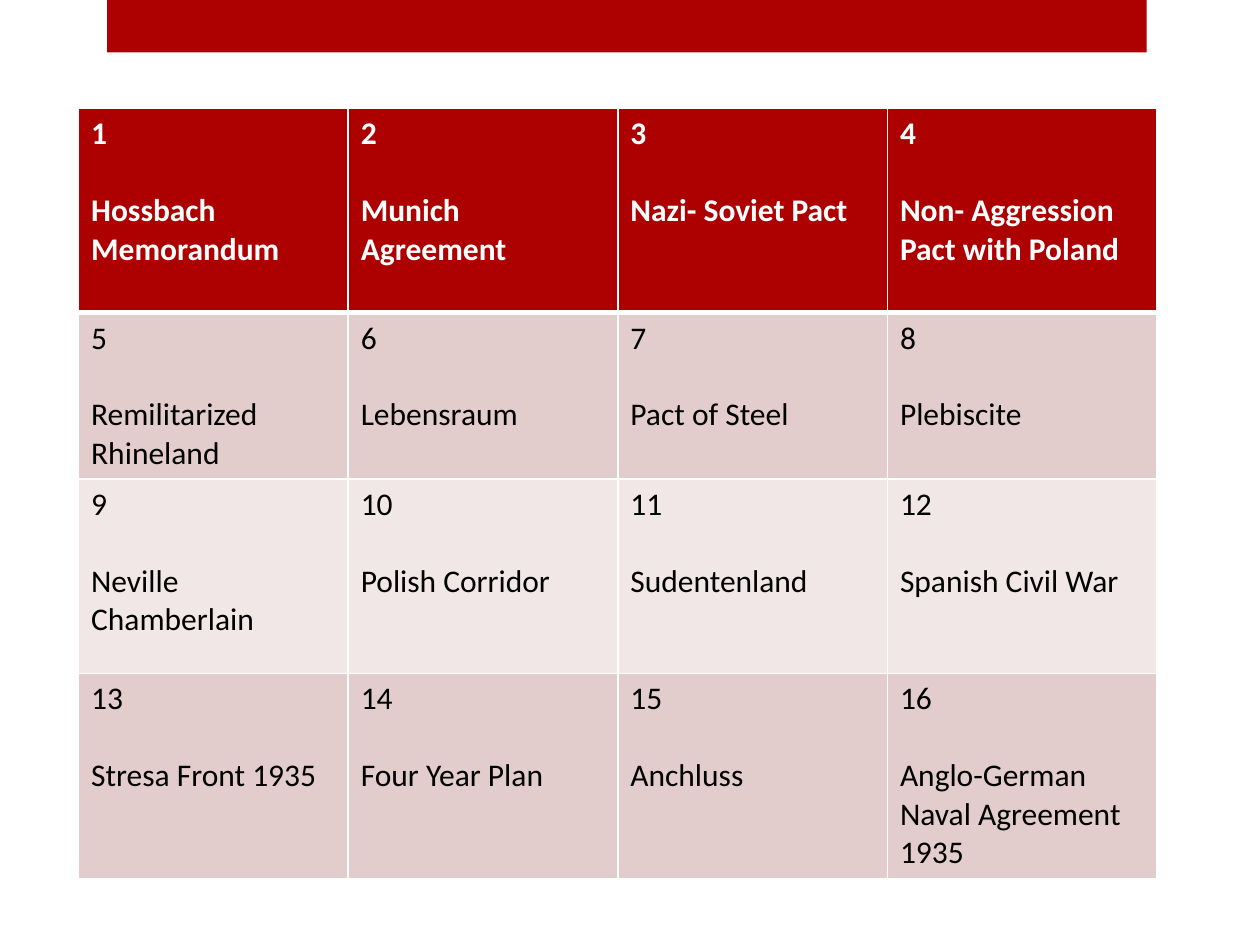
from dataclasses import dataclass

from lxml.etree import SubElement
from pptx import Presentation
from pptx.dml.color import RGBColor as Color
from pptx.enum.shapes import MSO_SHAPE as Shape
from pptx.oxml.ns import qn
from pptx.util import Pt

TERMS = [
    ["Hossbach Memorandum", "Munich Agreement", "Nazi- Soviet Pact", "Non- Aggression Pact with Poland"],
    ["Remilitarized Rhineland", "Lebensraum", "Pact of Steel", "Plebiscite"],
    ["Neville Chamberlain", "Polish Corridor", "Sudentenland", "Spanish Civil War"],
    ["Stresa Front 1935", "Four Year Plan", "Anchluss", "Anglo-German Naval Agreement 1935"],
]
ROW_HEIGHTS = [116.6, 95, 111, 117]
COLUMN_WIDTH = 154.08
TABLE_LEFT, TABLE_TOP = 44.9, 62.1
BANNER = (61.2, 0, 594, 30)


@dataclass(frozen=True)
class Theme:
    red: str = "AD0101"
    white: str = "FFFFFF"
    black: str = "000000"
    bands: tuple = ("F1E7E7", "E3CCCC")
    font: str = "Calibri"
    size: float = 18
    term_gap: float = 22
    border: float = 1
    header_border: float = 3


THEME = Theme()


def add_banner(slide):
    """Draw the red bar at the top of the slide."""
    banner = slide.shapes.add_shape(Shape.RECTANGLE, *map(Pt, BANNER))
    banner.shadow.inherit = False
    banner.fill.solid()
    banner.fill.fore_color.rgb = Color.from_string(THEME.red)
    banner.line.fill.background()


def set_borders(cell, bottom_width):
    """Give a cell white borders with the given bottom width."""
    properties = cell._tc.get_or_add_tcPr()
    widths = {"lnL": THEME.border, "lnR": THEME.border, "lnT": THEME.border, "lnB": bottom_width}
    for tag, width in widths.items():
        line = SubElement(properties, qn(f"a:{tag}"), w=str(Pt(width)))
        fill = SubElement(line, qn("a:solidFill"))
        SubElement(fill, qn("a:srgbClr"), val=THEME.white)


def fill_cell(cell, number, term, is_header, band):
    """Write a numbered term and style its cell."""
    set_borders(cell, THEME.header_border if is_header else THEME.border)
    cell.fill.solid()
    cell.fill.fore_color.rgb = Color.from_string(THEME.red if is_header else band)
    cell.text_frame.text = f"{number}\n{term}"
    cell.text_frame.paragraphs[1].space_before = Pt(THEME.term_gap)
    for paragraph in cell.text_frame.paragraphs:
        font = paragraph.runs[0].font
        font.name = THEME.font
        font.size = Pt(THEME.size)
        font.bold = is_header
        font.color.rgb = Color.from_string(THEME.white if is_header else THEME.black)


def add_terms_table(slide):
    """Build the numbered grid of terms."""
    column_count = len(TERMS[0])
    frame = slide.shapes.add_table(
        len(TERMS), column_count, Pt(TABLE_LEFT), Pt(TABLE_TOP),
        Pt(COLUMN_WIDTH * column_count), Pt(sum(ROW_HEIGHTS)))
    table = frame.table
    for column in table.columns:
        column.width = Pt(COLUMN_WIDTH)
    for row_index, (terms, height) in enumerate(zip(TERMS, ROW_HEIGHTS)):
        table.rows[row_index].height = Pt(height)
        for column_index, term in enumerate(terms):
            number = row_index * column_count + column_index + 1
            fill_cell(table.cell(row_index, column_index), number, term,
                      row_index == 0, THEME.bands[row_index % 2])


def main():
    """Build and save the slide."""
    presentation = Presentation()
    presentation.slide_width, presentation.slide_height = Pt(720), Pt(540)
    slide = presentation.slides.add_slide(presentation.slide_layouts[6])
    add_banner(slide)
    add_terms_table(slide)
    presentation.save("out.pptx")


if __name__ == "__main__":
    main()
